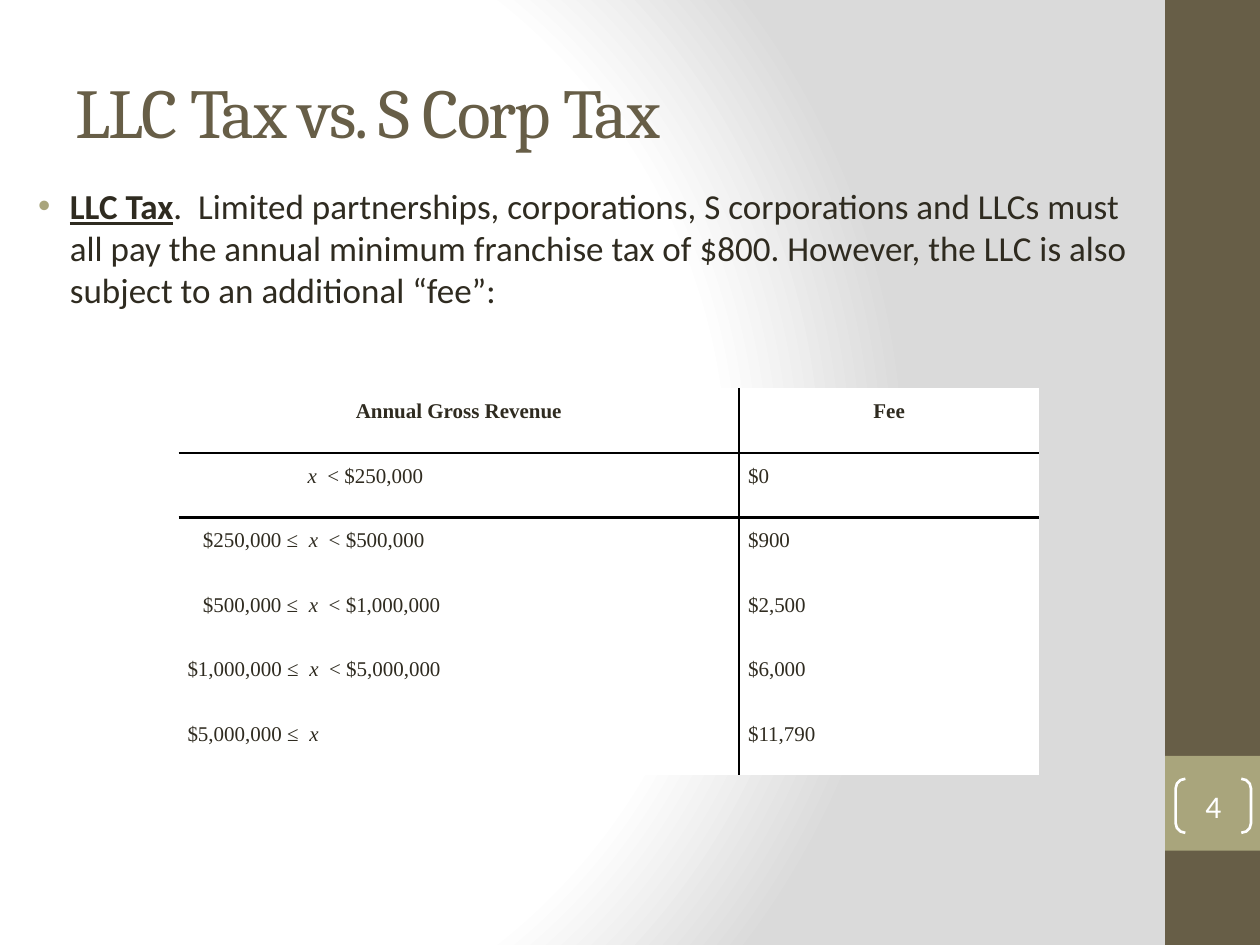
"""Build the LLC tax versus S corporation tax slide."""
import pptx
import pptx.dml.color
import pptx.enum.shapes
import pptx.enum.text
import pptx.oxml
import pptx.oxml.ns
import pptx.util

Cm = pptx.util.Cm
Pt = pptx.util.Pt
SHAPE = pptx.enum.shapes.MSO_SHAPE
ALIGN = pptx.enum.text.PP_ALIGN
ANCHOR = pptx.enum.text.MSO_ANCHOR
NS = pptx.oxml.ns.nsdecls("a", "p")

TITLE = "LLC Tax vs. S Corp Tax"
BODY = [
    ("LLC Tax", {"bold": True, "underline": True}),
    (".  Limited partnerships, corporations, S corporations and LLCs must all pay "
     "the annual minimum franchise tax of $800. However, the LLC is also subject "
     "to an additional “fee”:", {}),
]
PAGE = "4"
HEADER = ("Annual Gross Revenue", "Fee")
FEES = [
    ("", "< $250,000", "$0", 2.42),
    ("$250,000 ≤  ", "< $500,000", "$900", 0.31),
    ("$500,000 ≤  ", "< $1,000,000", "$2,500", 0.31),
    ("$1,000,000 ≤  ", "< $5,000,000", "$6,000", 0),
    ("$5,000,000 ≤  ", "", "$11,790", 0),
]
THEME = {
    "brown": "675E47", "olive": "A9A57C", "ink": "2F2B20", "white": "FFFFFF",
    "grey": "DADADA", "rule": "000000",
    "head": "Cambria", "text": "Calibri", "table": "Times New Roman",
    "title_pt": 40, "body_pt": 20, "page_pt": 18, "table_pt": 12, "rule_pt": 1.5,
}
WIDTH, HEIGHT = 25.4, 19.05
BAR = 1.91
COLS = (11.3, 6.05)
ROW = 1.3
NO_STYLE = "{2D5ABB26-0587-4C30-8999-92F81FD0307C}"


def rgb(name):
    """Return the theme colour as an RGB value."""
    return pptx.dml.color.RGBColor.from_string(THEME[name])


def add_text(p, text, font="text", size="body_pt", color="ink", bold=False,
             italic=False, underline=False, spacing=None):
    """Add one formatted run to a paragraph."""
    r = p.add_run()
    r.text = text
    f = r.font
    f.name, f.size = THEME[font], Pt(THEME[size])
    f.color.rgb = rgb(color)
    f.bold, f.italic, f.underline = bold, italic, underline
    if spacing is not None:
        r._r.get_or_add_rPr().set("spc", str(int(spacing * 100)))


def set_background(s):
    """Give the slide its radial gradient."""
    stops = "".join(
        f'<a:gs pos="{pos * 1000}"><a:srgbClr val="{THEME[c]}"/></a:gs>'
        for pos, c in ((0, "white"), (75, "white"), (100, "grey")))
    bg = pptx.oxml.parse_xml(
        f'<p:bg {NS}><p:bgPr><a:gradFill rotWithShape="1"><a:gsLst>{stops}</a:gsLst>'
        '<a:path path="circle"><a:fillToRect l="20000" t="50000" r="100000" b="50000"/>'
        '</a:path></a:gradFill><a:effectLst/></p:bgPr></p:bg>')
    s._element.cSld.insert(0, bg)


def add_block(s, top, height, color):
    """Add one plain rectangle of the right-hand bar."""
    sp = s.shapes.add_shape(SHAPE.RECTANGLE, Cm(WIDTH - BAR), Cm(top), Cm(BAR), Cm(height))
    sp.shadow.inherit = False
    sp.fill.solid()
    sp.fill.fore_color.rgb = rgb(color)
    sp.line.fill.background()


def add_page_number(s):
    """Add the number between brackets."""
    sp = s.shapes.add_shape(SHAPE.DOUBLE_BRACKET, Cm(23.7), Cm(15.7), Cm(1.52), Cm(1.09))
    sp.adjustments[0] = 0.18
    sp.shadow.inherit = False
    sp.fill.background()
    sp.line.color.rgb = rgb("white")
    sp.line.width = Pt(THEME["rule_pt"])
    tf = sp.text_frame
    tf.margin_left = tf.margin_right = tf.margin_top = tf.margin_bottom = 0
    tf.vertical_anchor = ANCHOR.MIDDLE
    p = tf.paragraphs[0]
    p.alignment = ALIGN.CENTER
    add_text(p, PAGE, size="page_pt", color="white")


def add_title(s):
    """Place and fill the title."""
    sp = s.shapes.title
    sp.left, sp.top, sp.width, sp.height = Cm(1.27), Cm(1.27), Cm(22.86), Cm(1.91)
    tf = sp.text_frame
    tf.auto_size = pptx.enum.text.MSO_AUTO_SIZE.NONE
    tf.vertical_anchor = ANCHOR.MIDDLE
    p = tf.paragraphs[0]
    p.alignment = ALIGN.LEFT
    add_text(p, TITLE, font="head", size="title_pt", color="brown", spacing=-1)


def add_body(s):
    """Add the bulleted paragraph."""
    tf = s.shapes.add_textbox(Cm(0.2), Cm(3.6), Cm(22.86), Cm(15.04)).text_frame
    tf.word_wrap = True
    p = tf.paragraphs[0]
    p.space_before = Pt(4)
    pPr = p._p.get_or_add_pPr()
    pPr.set("marL", str(Cm(0.96)))
    pPr.set("indent", str(Cm(-0.64)))
    for xml in (f'<a:buClr {NS}><a:srgbClr val="{THEME["olive"]}"/></a:buClr>',
                f'<a:buFont {NS} typeface="Arial"/>',
                f'<a:buChar {NS} char="•"/>'):
        pPr.append(pptx.oxml.parse_xml(xml))
    for text, fmt in BODY:
        add_text(p, text, **fmt)


def fill_cell(cell, runs, sides, align, indent=0):
    """Fill one table cell and rule the given sides."""
    cell.margin_left = cell.margin_right = Cm(0.18)
    cell.margin_top = cell.margin_bottom = 0
    cell.fill.solid()
    cell.fill.fore_color.rgb = rgb("white")
    p = cell.text_frame.paragraphs[0]
    p.alignment, p.line_spacing = align, 1.5
    p._p.get_or_add_pPr().set("marL", str(Cm(indent)))
    for text, fmt in runs:
        add_text(p, text, font="table", size="table_pt", **fmt)
    tcPr = cell._tc.get_or_add_tcPr()
    for i, side in enumerate(sides):
        tcPr.insert(i, pptx.oxml.parse_xml(
            f'<a:ln{side} {NS} w="{Pt(THEME["rule_pt"])}"><a:solidFill>'
            f'<a:srgbClr val="{THEME["rule"]}"/></a:solidFill></a:ln{side}>'))


def add_fee_table(s):
    """Add the table of fees by revenue."""
    n = len(FEES) + 1
    tbl = s.shapes.add_table(n, 2, Cm(3.6), Cm(7.83), Cm(sum(COLS)), Cm(ROW * n)).table
    tbl.first_row = tbl.horz_banding = False
    tbl._tbl.tblPr.find(pptx.oxml.ns.qn("a:tableStyleId")).text = NO_STYLE
    for col, width in zip(tbl.columns, COLS):
        col.width = Cm(width)
    for c, (text, side) in enumerate(zip(HEADER, "RL")):
        fill_cell(tbl.cell(0, c), [(text, {"bold": True})], side + "B", ALIGN.CENTER)
    for r, (low, high, fee, indent) in enumerate(FEES, 1):
        top = "T" if r == 1 else ""
        parts = [(low, {}), ("x  " if high else "x", {"italic": True}), (high, {})]
        revenue = [part for part in parts if part[0]]
        fill_cell(tbl.cell(r, 0), revenue, "R" + top, ALIGN.JUSTIFY, indent)
        fill_cell(tbl.cell(r, 1), [(fee, {})], "L" + top, ALIGN.JUSTIFY)


def main():
    """Assemble and save the slide."""
    prs = pptx.Presentation()
    prs.slide_width, prs.slide_height = Cm(WIDTH), Cm(HEIGHT)
    s = prs.slides.add_slide(prs.slide_layouts[5])
    set_background(s)
    add_block(s, 0, HEIGHT, "brown")
    add_block(s, 15.24, BAR, "olive")
    add_title(s)
    add_body(s)
    add_page_number(s)
    add_fee_table(s)
    prs.save("out.pptx")


if __name__ == "__main__":
    main()
